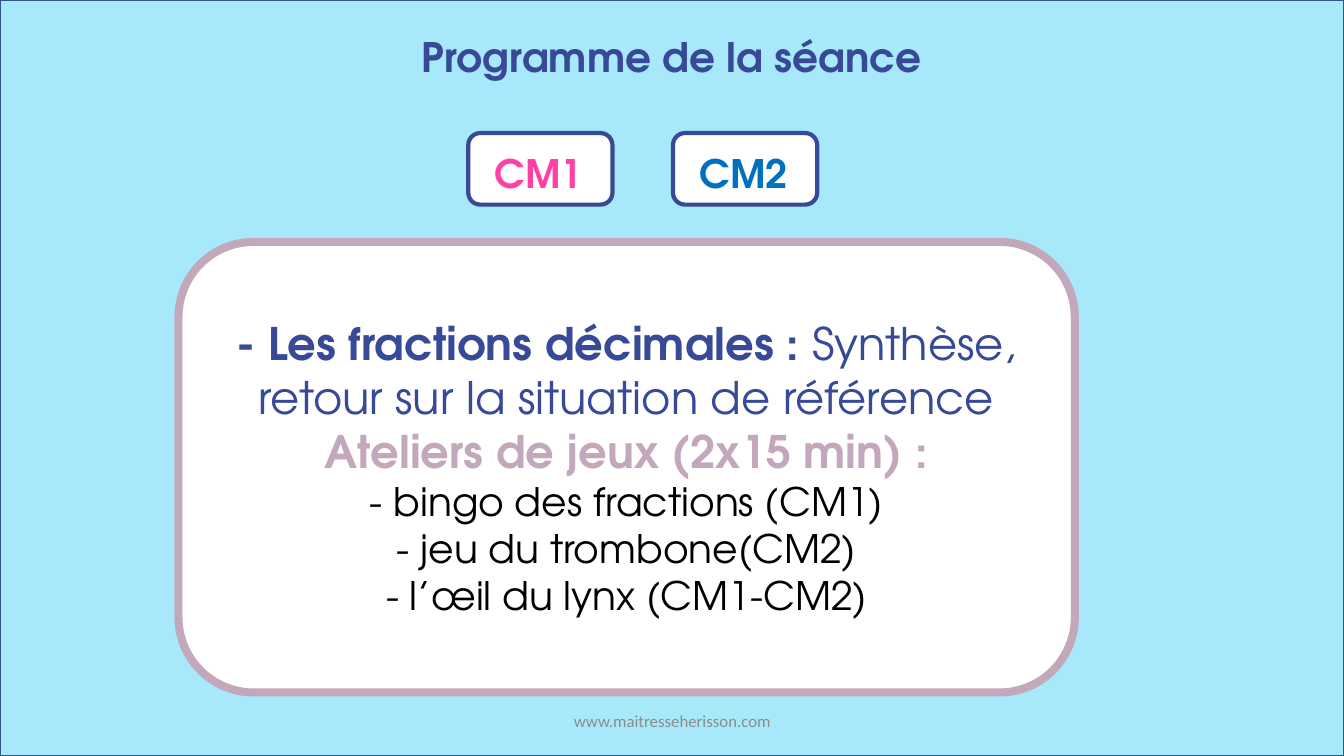
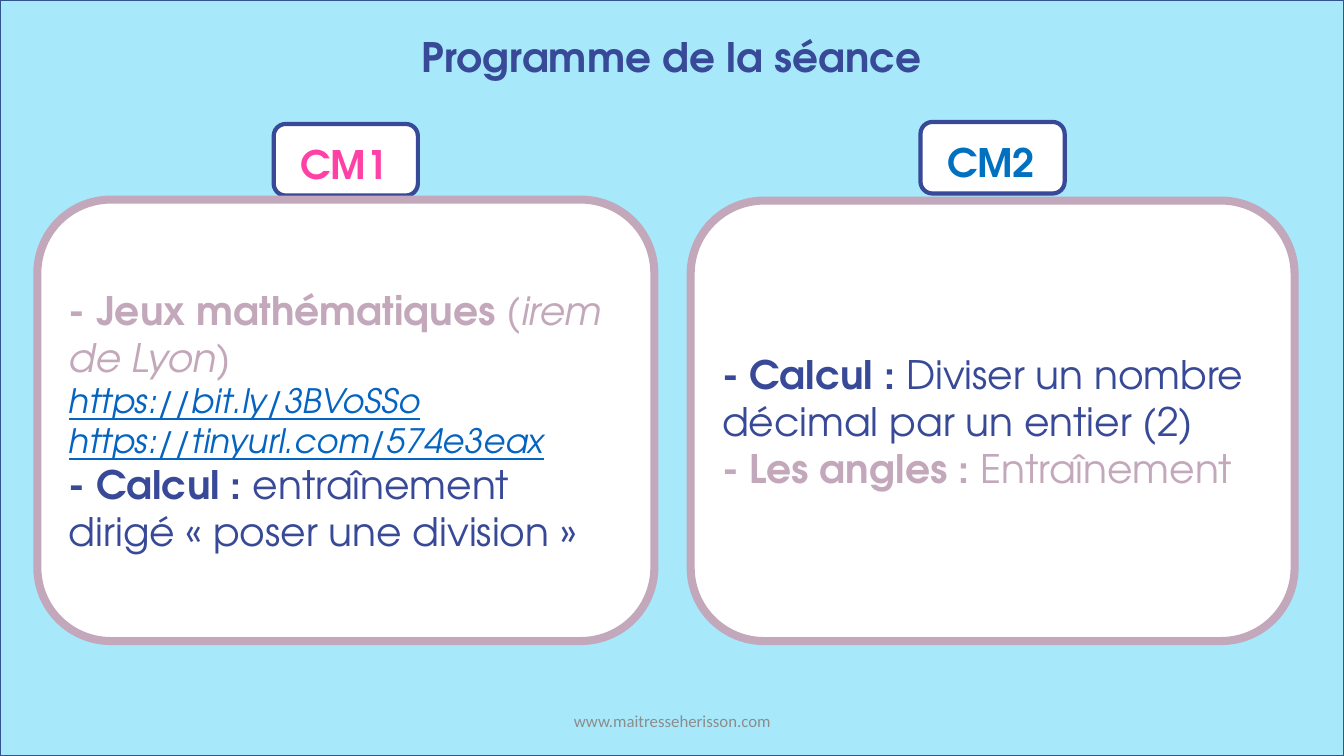
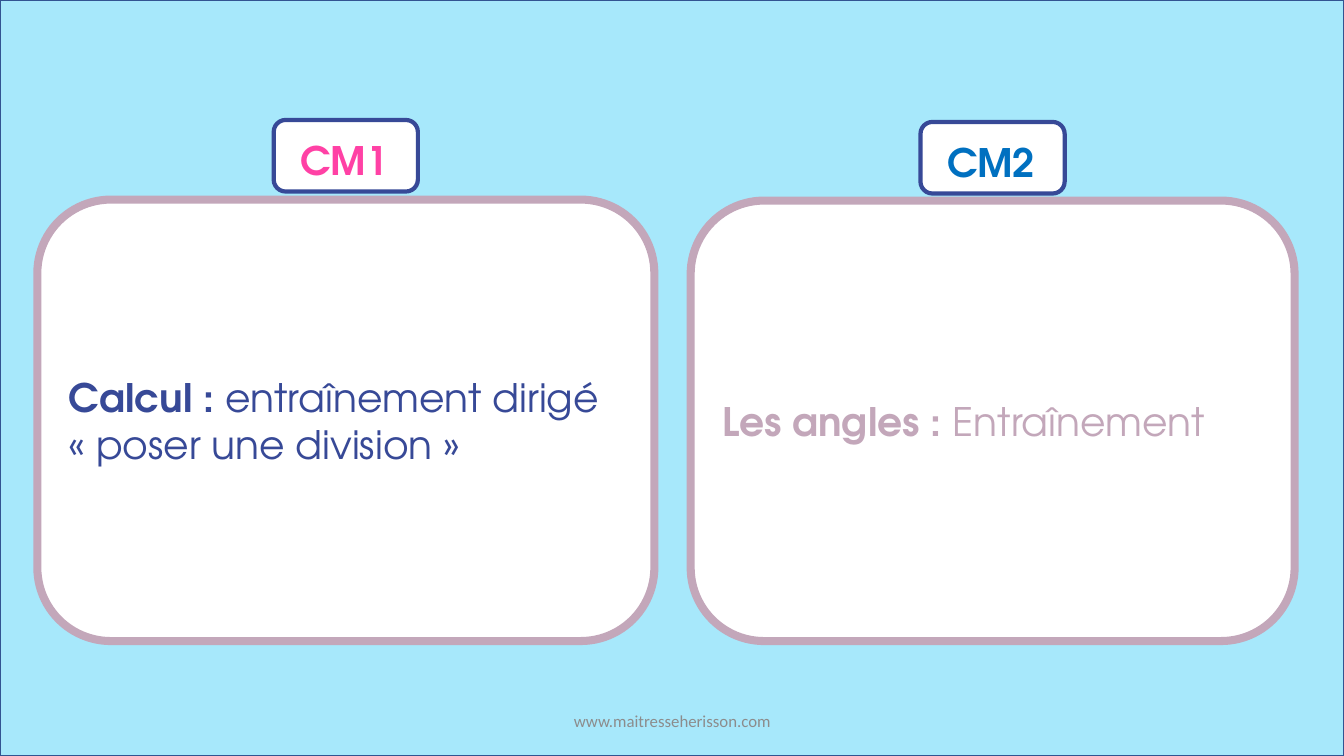
from dataclasses import dataclass

from pptx import Presentation
from pptx.dml.color import RGBColor as Rgb
from pptx.enum.shapes import MSO_SHAPE as Preset
from pptx.enum.text import MSO_ANCHOR as Anchor, MSO_AUTO_SIZE as AutoSize, PP_ALIGN as Align
from pptx.util import Inches, Pt


@dataclass(frozen=True)
class Theme:
    sky: str = "A7E8FB"
    frame: str = "325491"
    navy: str = "374997"
    mauve: str = "C3A7BA"
    pink: str = "FF41A5"
    blue: str = "0070C0"
    link: str = "0563C1"
    grey: str = "8C8C8C"
    black: str = "000000"
    white: str = "FFFFFF"
    face: str = "TeX Gyre Adventor"
    footer_face: str = "Calibri"
    lead: int = 32
    title: int = 29
    body: int = 28
    address: int = 24
    footer: int = 12
    frame_line: float = 1
    badge_line: float = 3
    card_line: float = 5.75


THEME = Theme()
WIDTH, HEIGHT = 13.33, 7.5
TITLE_BOX = (0, 0.27, WIDTH, 0.59)
FOOTER_BOX = (4.42, 6.95, 4.5, 0.4)
BADGE_WIDTH, BADGE_HEIGHT = 1.43, 0.71
LEFT_CARD = (0.37, 1.98, 6.12, 4.38)
RIGHT_CARD = (6.85, 1.99, 5.99, 4.37)
WIDE_CARD = (1.77, 2.4, 8.89, 4.47)
LEFT_CENTRE, RIGHT_CENTRE = (left + width / 2 for left, _, width, _ in (LEFT_CARD, RIGHT_CARD))


def style(color, size=THEME.body, face=THEME.face, **font):
    return color, {"name": face, "size": Pt(size), "bold": False, **font}


STYLES = {
    "title": style(THEME.navy, THEME.title, bold=True),
    "footer": style(THEME.grey, THEME.footer, THEME.footer_face),
    "CM1": style(THEME.pink, bold=True),
    "CM2": style(THEME.blue, bold=True),
    "lead bold": style(THEME.navy, THEME.lead, bold=True),
    "lead": style(THEME.navy, THEME.lead),
    "lead games": style(THEME.mauve, THEME.lead, bold=True),
    "game": style(THEME.black),
    "navy bold": style(THEME.navy, bold=True),
    "navy": style(THEME.navy),
    "mauve bold": style(THEME.mauve, bold=True),
    "mauve": style(THEME.mauve),
    "mauve italic": style(THEME.mauve, italic=True),
    "address": style(THEME.link, THEME.address, italic=True, underline=True),
}

FOOTER = "www.maitresseherisson.com"
PROGRAMME = "Programme de la séance"
DIVISION = ("entraînement dirigé « poser une division »", "navy")
TRAINING = ("Entraînement", "mauve")

SLIDES = [
    {
        "title": PROGRAMME,
        "badges": [("CM1", 5.36, 1.32), ("CM2", 7.39, 1.32)],
        "cards": [
            (WIDE_CARD, Align.CENTER, [
                [("- Les fractions décimales : ", "lead bold"),
                 ("Synthèse, retour sur la situation de référence", "lead")],
                [("Ateliers de jeux (2x15 min) :", "lead games")],
                [("- bingo des fractions (CM1)", "game")],
                [("- jeu du trombone(CM2)", "game")],
                [("- l’œil du lynx (CM1-CM2)", "game")],
            ]),
        ],
    },
    {
        "title": PROGRAMME,
        "badges": [("CM1", LEFT_CENTRE, 1.23), ("CM2", RIGHT_CENTRE, 1.21)],
        "cards": [
            (LEFT_CARD, Align.LEFT, [
                [("- Jeux mathématiques ", "mauve bold"), ("(irem de Lyon)", "mauve italic")],
                [("https://bit.ly/3BVoSSo", "address")],
                [("https://tinyurl.com/574e3eax", "address")],
                [("- Calcul : ", "navy bold"), DIVISION],
            ]),
            (RIGHT_CARD, Align.LEFT, [
                [("- Calcul : ", "navy bold"),
                 ("Diviser un nombre décimal par un entier (2)", "navy")],
                [("- Les angles : ", "mauve bold"), TRAINING],
            ]),
        ],
    },
    {
        "title": None,
        "badges": [("CM1", LEFT_CENTRE, 1.19), ("CM2", RIGHT_CENTRE, 1.21)],
        "cards": [
            (LEFT_CARD, Align.LEFT, [[("Calcul : ", "navy bold"), DIVISION]]),
            (RIGHT_CARD, Align.LEFT, [[("Les angles : ", "mauve bold"), TRAINING]]),
        ],
    },
]


def assign(target, values):
    for name, value in values.items():
        setattr(target, name, value)


def inches(box):
    return [Inches(length) for length in box]


def write(frame, paragraphs, align, **layout):
    assign(frame, {"word_wrap": True, "auto_size": AutoSize.NONE, **layout})
    for index, runs in enumerate(paragraphs):
        paragraph = frame.add_paragraph() if index else frame.paragraphs[0]
        paragraph.alignment = align
        for text, style_name in runs:
            run = paragraph.add_run()
            run.text = text
            color, font = STYLES[style_name]
            assign(run.font, font)
            run.font.color.rgb = Rgb.from_string(color)


def panel(slide, preset, box, fill, line, weight):
    shape = slide.shapes.add_shape(preset, *inches(box))
    shape.shadow.inherit = False
    shape.fill.solid()
    shape.fill.fore_color.rgb = Rgb.from_string(fill)
    shape.line.color.rgb = Rgb.from_string(line)
    shape.line.width = Pt(weight)
    return shape


def add_backdrop(slide):
    backdrop = panel(slide, Preset.RECTANGLE, (0, 0, WIDTH, HEIGHT),
                     THEME.sky, THEME.frame, THEME.frame_line)
    backdrop.element.getparent().insert(2, backdrop.element)


def add_title(slide, text):
    heading = slide.shapes.title
    assign(heading, dict(zip(("left", "top", "width", "height"), inches(TITLE_BOX))))
    write(heading.text_frame, [[(text, "title")]], Align.CENTER, vertical_anchor=Anchor.TOP)


def add_badge(slide, level, centre, top):
    badge = panel(slide, Preset.ROUNDED_RECTANGLE,
                  (centre - BADGE_WIDTH / 2, top, BADGE_WIDTH, BADGE_HEIGHT),
                  THEME.white, THEME.navy, THEME.badge_line)
    write(badge.text_frame, [[(level, level)]], Align.LEFT, vertical_anchor=Anchor.TOP,
          margin_left=Inches(0.23), margin_top=Inches(0.13), margin_right=0, margin_bottom=0)


def add_card(slide, box, align, paragraphs):
    card = panel(slide, Preset.ROUNDED_RECTANGLE, box,
                 THEME.white, THEME.mauve, THEME.card_line)
    write(card.text_frame, paragraphs, align, vertical_anchor=Anchor.MIDDLE)


def add_footer(slide):
    footer = slide.shapes.add_textbox(*inches(FOOTER_BOX))
    write(footer.text_frame, [[(FOOTER, "footer")]], Align.CENTER, vertical_anchor=Anchor.MIDDLE)


def main():
    deck = Presentation()
    deck.slide_width, deck.slide_height = inches((WIDTH, HEIGHT))
    title_only, blank = deck.slide_layouts[5], deck.slide_layouts[6]
    for content in SLIDES:
        slide = deck.slides.add_slide(title_only if content["title"] else blank)
        add_backdrop(slide)
        if content["title"]:
            add_title(slide, content["title"])
        for badge in content["badges"]:
            add_badge(slide, *badge)
        for card in content["cards"]:
            add_card(slide, *card)
        add_footer(slide)
    deck.save("out.pptx")


if __name__ == "__main__":
    main()
